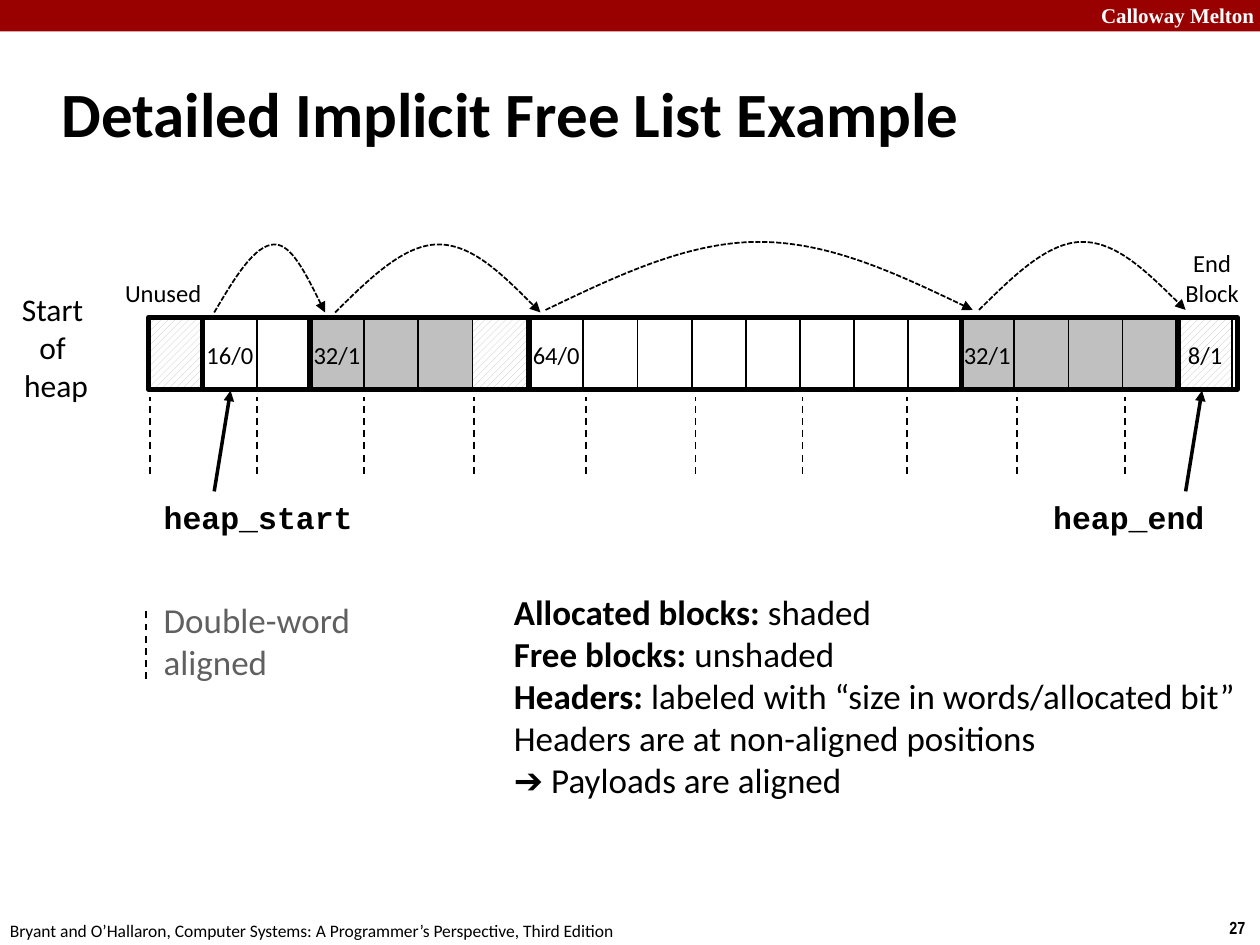
"""Build the slide on a detailed implicit free list example."""
import pptx
import pptx.dml.color
import pptx.enum.dml
import pptx.enum.shapes
import pptx.enum.text
import pptx.oxml
import pptx.oxml.ns
import pptx.util

RGB = pptx.dml.color.RGBColor
BLACK = RGB(0, 0, 0)
WHITE = RGB(255, 255, 255)
RED = RGB(0x99, 0, 0)
SHADE = RGB(0xC0, 0xC0, 0xC0)
GREY = RGB(0x60, 0x60, 0x60)
IN = pptx.util.Inches
ALIGN = pptx.enum.text.PP_ALIGN
ANCHOR = pptx.enum.text.MSO_ANCHOR
DASH = pptx.enum.dml.MSO_LINE
RECT = pptx.enum.shapes.MSO_SHAPE.RECTANGLE

CELL_W, CELL_H, ROW_TOP = 0.43, 0.57, 2.53
F, A, H = "free", "allocated", "hatched"
BLOCKS = [
    (1.18, 0.44, "", [H]),
    (1.61, 0.85, "16/0", [F] * 2),
    (2.46, 1.74, "32/1", [A] * 3 + [H]),
    (7.62, 1.73, "32/1", [A] * 4),
    (9.35, 0.47, "8/1", [H]),
    (4.2, 3.43, "64/0", [F] * 8),
]
ARCS = [
    (1.7, 2.18, 2.58, 1.94),
    (2.66, 3.48, 4.29, 1.94),
    (4.33, 6.02, 7.72, 1.92),
    (7.77, 8.59, 9.41, 1.92),
]
ARC_H = 0.54
ALIGNED_X = [1.19, 2.04, 2.89, 3.76, 4.65, 5.52, 6.37, 7.2, 8.07, 8.93]
POINTER_X = [1.7, 9.41]
HEADER = [[("Calloway Melton", True)]]
NUMBER = [[("27", True)]]
FOOTER = [[("Bryant and O’Hallaron, Computer Systems: "
            "A Programmer’s Perspective, Third Edition", False)]]
TITLE = [[("Detailed Implicit Free List Example", True)]]
START = [[("Start ", False)], [("of ", False)], [("heap", False)]]
LEGEND = [[("Double-word", False)], [("aligned", False)]]
END = [[("End", False)], [("Block", False)]]
UNUSED = [[("Unused", False)]]
NOTES = [
    [("Allocated blocks: ", True), ("shaded", False)],
    [("Free blocks: ", True), ("unshaded", False)],
    [("Headers: ", True), ("labeled with “size in words/allocated bit”", False)],
    [("Headers are at non-aligned positions", False)],
    [("➔ Payloads are aligned", False)],
]
TEXTS = [
    (8.64, -0.03, 1.43, 0.3, HEADER, 12, "Times New Roman", WHITE, "wrap"),
    (9.66, 7.23, 0.34, 0.27, NUMBER, 10, "Arial Narrow", BLACK, ""),
    (-0.02, 7.25, 5.08, 0.27, FOOTER, 10, "Calibri", BLACK, ""),
    (0.39, 0.48, 8.3, 0.83, TITLE, 36, "Calibri", BLACK, "wrap middle fixed"),
    (0.07, 2.25, 0.75, 1.01, START, 18, "Calibri", BLACK, "middle centre"),
    (1.2, 4.7, 2.04, 0.77, LEGEND, 20, "Calibri", GREY, "wrap middle"),
    (9.3, 1.92, 0.64, 0.57, END, 14, "Calibri", BLACK, "middle centre"),
    (3.98, 4.64, 5.98, 1.78, NOTES, 20, "Calibri", BLACK, ""),
    (0.89, 2.15, 0.81, 0.34, UNUSED, 14, "Calibri", BLACK, "middle centre"),
    (1.2, 3.9, 1.71, 0.4, [[("heap_start", True)]], 18, "Courier New", BLACK, ""),
    (8.26, 3.9, 1.41, 0.4, [[("heap_end", True)]], 18, "Courier New", BLACK, ""),
]


def write(sp, paragraphs, size, font, color, mode):
    tf = sp.text_frame
    tf.word_wrap = "wrap" in mode
    tf.vertical_anchor = ANCHOR.MIDDLE if "middle" in mode else ANCHOR.TOP
    if "fixed" not in mode:
        tf.auto_size = pptx.enum.text.MSO_AUTO_SIZE.SHAPE_TO_FIT_TEXT
    for i, runs in enumerate(paragraphs):
        p = tf.paragraphs[0] if i == 0 else tf.add_paragraph()
        p.alignment = ALIGN.CENTER if "centre" in mode else ALIGN.LEFT
        for text, bold in runs:
            r = p.add_run()
            r.text = text
            r.font.size, r.font.name, r.font.bold = pptx.util.Pt(size), font, bold
            r.font.color.rgb = color


def stroke(sp, width, dash=None, arrow=False):
    sp.line.color.rgb = BLACK
    sp.line.width = pptx.util.Pt(width)
    if dash:
        sp.line.dash_style = dash
    if arrow:
        ln = sp._element.spPr.find(pptx.oxml.ns.qn("a:ln"))
        ln.append(pptx.oxml.parse_xml(
            f'<a:tailEnd {pptx.oxml.ns.nsdecls("a")} type="triangle"/>'))


def rect(s, x, y, w, h, fill=None, width=1):
    sp = s.shapes.add_shape(RECT, IN(x), IN(y), IN(w), IN(h))
    sp.shadow.inherit = False
    if fill == H:
        sp.fill.patterned()
        sp.fill.pattern = pptx.enum.dml.MSO_PATTERN.WIDE_UPWARD_DIAGONAL
        sp.fill.fore_color.rgb, sp.fill.back_color.rgb = SHADE, WHITE
    elif fill is None:
        sp.fill.background()
    else:
        sp.fill.solid()
        sp.fill.fore_color.rgb = fill
    if width:
        stroke(sp, width)
    else:
        sp.line.fill.background()
    return sp


def line(s, x1, y1, x2, y2, width, dash=None, arrow=False):
    sp = s.shapes.add_connector(pptx.enum.shapes.MSO_CONNECTOR.STRAIGHT,
                                IN(x1), IN(y1), IN(x2), IN(y2))
    stroke(sp, width, dash, arrow)
    sp._element.spPr.append(pptx.oxml.parse_xml(
        f'<a:effectLst {pptx.oxml.ns.nsdecls("a")}/>'))


def arc(s, left, peak, right, top):
    xs = [left + (peak - left) * i / 3 for i in range(4)]
    xs += [peak + (right - peak) * i / 3 for i in range(1, 4)]
    ys = [top + ARC_H * share for share in (1, 0.5, 0, 0, 0, 0.5, 1)]
    points = [(IN(x), IN(y)) for x, y in zip(xs, ys)]
    fb = s.shapes.build_freeform(*points[0])
    fb.add_line_segments(points[1:], close=False)
    sp = fb.convert_to_shape()
    qn = pptx.oxml.ns.qn
    segments = list(sp._element.iter(qn("a:lnTo")))
    outline = segments[0].getparent()
    for i in range(0, len(segments), 3):
        curve = pptx.oxml.parse_xml(f'<a:cubicBezTo {pptx.oxml.ns.nsdecls("a")}/>')
        for segment in segments[i:i + 3]:
            curve.append(segment[0])
            outline.remove(segment)
        outline.append(curve)
    sp.shadow.inherit = False
    sp.fill.background()
    stroke(sp, 1, DASH.SQUARE_DOT, arrow=True)


def main():
    prs = pptx.Presentation()
    prs.slide_width, prs.slide_height = IN(10), IN(7.5)
    s = prs.slides.add_slide(prs.slide_layouts[6])
    rect(s, 0, 0, 10, 0.25, RED, 0)
    fills = {F: WHITE, A: SHADE, H: H}
    for left, width, label, cells in BLOCKS:
        for i, kind in enumerate(cells):
            sp = rect(s, left + i * CELL_W, ROW_TOP, CELL_W, CELL_H, fills[kind])
            if i == 0 and label:
                write(sp, [[(label, False)]], 14, "Calibri", BLACK,
                      "middle centre fixed")
        rect(s, left, ROW_TOP - 0.01, width, CELL_H, None, 3)
    for curve in ARCS:
        arc(s, *curve)
    for x in ALIGNED_X:
        line(s, x, 3.76, x, 3.15, 1, DASH.DASH)
    line(s, 1.16, 5.39, 1.16, 4.84, 1, DASH.DASH)
    for x in POINTER_X:
        line(s, x, 3.9, x + 0.13, 3.1, 2, arrow=True)
    for x, y, w, h, *content in TEXTS:
        write(s.shapes.add_textbox(IN(x), IN(y), IN(w), IN(h)), *content)
    prs.save("out.pptx")


if __name__ == "__main__":
    main()
